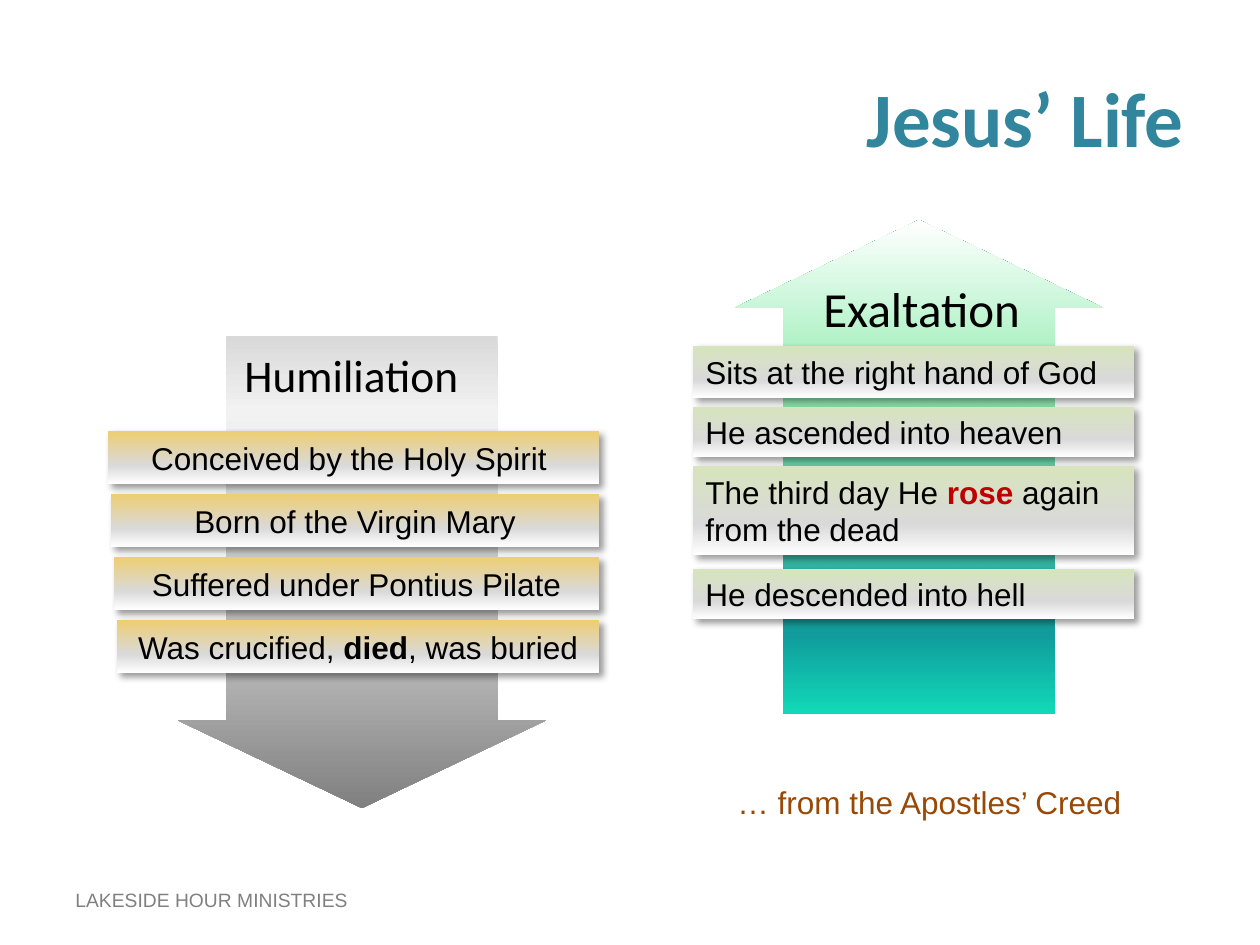
from lxml.etree import SubElement
from pptx import Presentation
from pptx.dml.color import RGBColor
from pptx.enum.shapes import MSO_SHAPE as Shape
from pptx.enum.text import MSO_ANCHOR as Anchor, PP_ALIGN as Align
from pptx.oxml.ns import qn
from pptx.util import Emu, Pt

EMU_PER_PX = 914400 / 126
COLORS = {
    "text": "000000",
    "title": "31859C",
    "source": "984807",
    "footer": "808080",
    "rose": "C00000",
    "shadow": "000000",
}
GRADIENTS = {
    "descent": [(0, "D9D9D9"), (16, "F2F2F2"), (65, "BFBFBF"), (100, "808080")],
    "ascent": [(0, "11D9B8"), (16, "109C9C"), (65, "91EDB0"), (100, "FFFFFF")],
    "gold": [(0, "EECE72"), (65, "D9D9D9"), (100, "FFFFFF")],
    "green": [(0, "D7E4BD"), (65, "D9D9D9"), (100, "FFFFFF")],
}
HUMILIATION = [
    [("Conceived by the Holy Spirit ", None)],
    [("Born of the Virgin Mary", None)],
    [("Suffered under Pontius Pilate", None)],
    [("Was crucified, ", None), ("died", "text"), (", was buried", None)],
]
EXALTATION = [
    (346, 52, [("Sits at the right hand of God", None)]),
    (407, 50, [("He ascended into heaven", None)]),
    (466, 89, [("The third day He ", None), ("rose", "rose"), (" again from the dead", None)]),
    (569, 50, [("He descended into hell", None)]),
]


def px(*lengths):
    return [Emu(round(length * EMU_PER_PX)) for length in lengths]


def style(paragraph, size, color="text", face="Arial", bold=False, align=Align.LEFT):
    paragraph.alignment = align
    font = paragraph.font
    font.name, font.size, font.bold = face, Pt(size), bold
    font.color.rgb = RGBColor.from_string(COLORS[color])


def fill_gradient(shape, name):
    shape.fill.gradient()
    shape.fill.gradient_angle = 270
    stops = shape.element.spPr.find(qn("a:gradFill")).find(qn("a:gsLst"))
    for stop in list(stops):
        stops.remove(stop)
    for position, color in GRADIENTS[name]:
        stop = SubElement(stops, qn("a:gs"), pos=str(position * 1000))
        SubElement(stop, qn("a:srgbClr"), val=color)
    shape.line.fill.background()
    shape.shadow.inherit = False


def cast_shadow(shape):
    effects = shape.element.spPr.find(qn("a:effectLst"))
    shadow = SubElement(effects, qn("a:outerShdw"), blurRad=str(Pt(4)), dist=str(Pt(3)),
                        dir=str(45 * 60000), algn="tl", rotWithShape="0")
    color = SubElement(shadow, qn("a:srgbClr"), val=COLORS["shadow"])
    SubElement(color, qn("a:alpha"), val="40000")


def add_arrow(shapes, box, gradient, rotation=0):
    arrow = shapes.add_shape(Shape.DOWN_ARROW, *px(*box))
    arrow.adjustments[0], arrow.adjustments[1] = 0.738, 0.238
    arrow.rotation = rotation
    fill_gradient(arrow, gradient)


def add_bar(shapes, box, gradient, parts, align):
    bar = shapes.add_shape(Shape.RECTANGLE, *px(*box))
    fill_gradient(bar, gradient)
    cast_shadow(bar)
    paragraph = bar.text_frame.paragraphs[0]
    style(paragraph, 18, align=align)
    for text, emphasis in parts:
        run = paragraph.add_run()
        run.text = text
        if emphasis:
            run.font.bold = True
            run.font.color.rgb = RGBColor.from_string(COLORS[emphasis])


def add_label(shapes, box, text, size, **look):
    frame = shapes.add_textbox(*px(*box)).text_frame
    frame.word_wrap = True
    frame.text = text
    style(frame.paragraphs[0], size, **look)


def set_title(slide, text):
    title = slide.shapes.title
    title.left, title.top, title.width, title.height = px(63, 38, 1134, 158)
    frame = title.text_frame
    frame.text = text
    frame.vertical_anchor = Anchor.MIDDLE
    style(frame.paragraphs[0], 44, "title", "Calibri", True, Align.RIGHT)


def add_humiliation(shapes):
    add_arrow(shapes, (178, 336, 368, 472), "descent")
    add_label(shapes, (232, 341, 260, 63), "Humiliation", 25.9, face="Calibri")
    right = 599
    for step, parts in enumerate(HUMILIATION):
        left, top = 108 + 3 * step, 431 + 63 * step
        add_bar(shapes, (left, top, right - left, 53), "gold", parts, Align.CENTER)


def add_exaltation(shapes):
    add_arrow(shapes, (735, 220, 368, 494), "ascent", rotation=180)
    for top, height, parts in EXALTATION:
        add_bar(shapes, (693, top, 441, height), "green", parts, Align.LEFT)
    add_label(shapes, (811, 272, 240, 63), "Exaltation", 28, face="Calibri")


def main():
    deck = Presentation()
    deck.slide_width, deck.slide_height = px(1260, 945)
    slide = deck.slides.add_slide(deck.slide_layouts[5])
    set_title(slide, "Jesus’ Life")
    add_label(slide.shapes, (63, 882, 347, 36), "LAKESIDE HOUR MINISTRIES", 11, color="footer")
    add_humiliation(slide.shapes)
    add_exaltation(slide.shapes.add_group_shape().shapes)
    add_label(slide.shapes, (725, 777, 441, 51), "… from the Apostles’ Creed", 18, color="source")
    deck.save("out.pptx")


if __name__ == "__main__":
    main()
